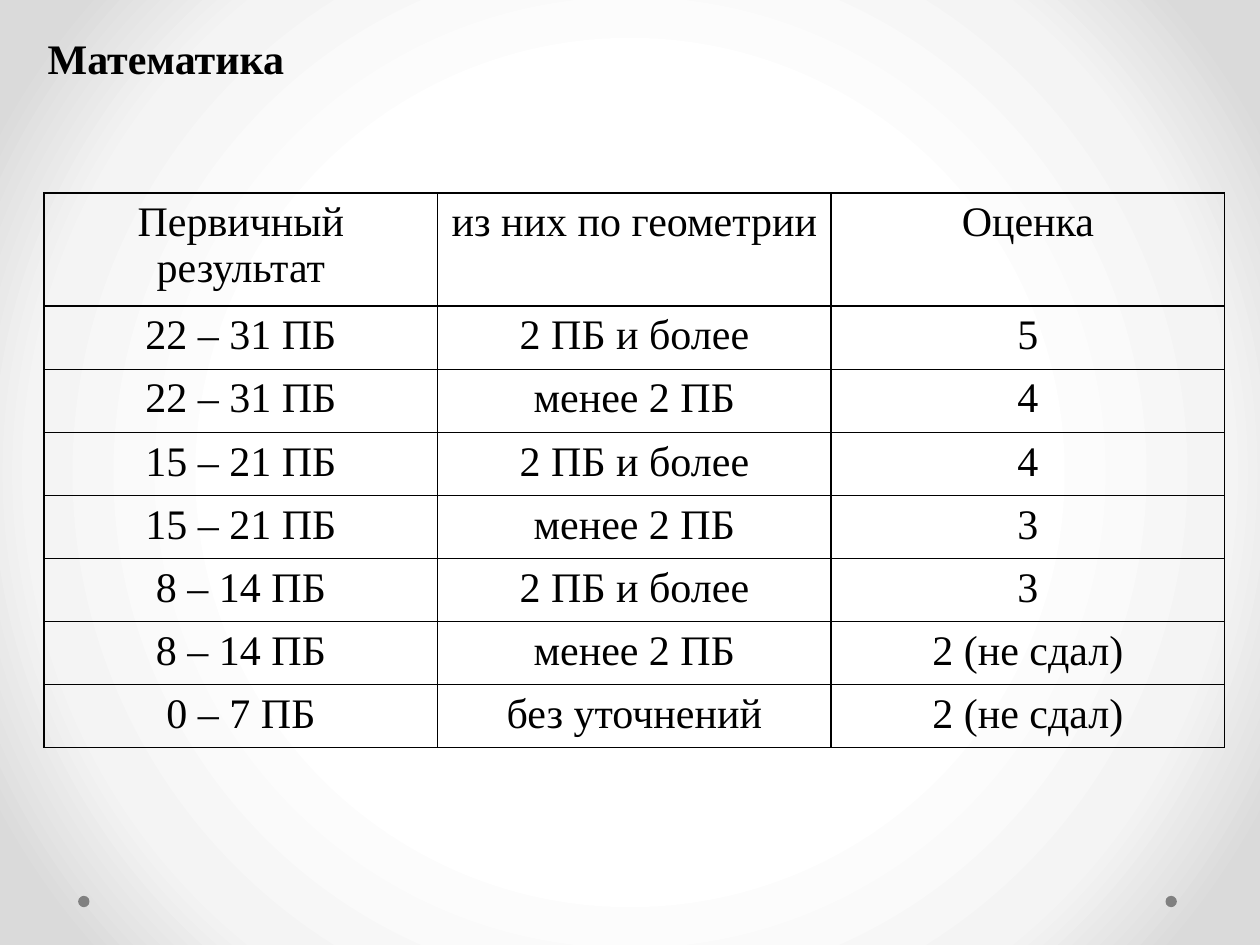
from lxml import etree
from pptx import Presentation
from pptx.dml.color import RGBColor
from pptx.enum.shapes import MSO_SHAPE
from pptx.enum.text import PP_ALIGN
from pptx.oxml import parse_xml
from pptx.oxml.ns import nsdecls, qn
from pptx.util import Inches, Pt

CENTER = PP_ALIGN.CENTER
OVAL = MSO_SHAPE.OVAL

WIDTH, HEIGHT = 10, 7.5
FONT = "Times New Roman"
BLACK, GRAY = "000000", "808080"
BACKDROP_STOPS = [(50, "FFFFFF"), (76, "F4F4F4"), (92, "DADADA")]

TABLE_LEFT, TABLE_TOP, TABLE_WIDTH = 0.35, 1.53, 9.37
HEADER_HEIGHT, ROW_HEIGHT = 0.9, 0.5
DOT_SIZE, DOT_TOP = 0.09, 7.11

GRADES = [
    ("Первичный результат", "из них по геометрии", "Оценка"),
    ("22 – 31 ПБ", "2 ПБ и более", "5"),
    ("22 – 31 ПБ", "менее 2 ПБ", "4"),
    ("15 – 21 ПБ", "2 ПБ и более", "4"),
    ("15 – 21 ПБ", "менее 2 ПБ", "3"),
    ("8 – 14 ПБ", "2 ПБ и более", "3"),
    ("8 – 14 ПБ", "менее 2 ПБ", "2 (не сдал)"),
    ("0 – 7 ПБ", "без уточнений", "2 (не сдал)"),
]


def color(hex_value):
    return RGBColor.from_string(hex_value)


def write(frame, text, bold=False, align=None):
    frame.text = text
    paragraph = frame.paragraphs[0]
    paragraph.alignment = align
    font = paragraph.runs[0].font
    font.name, font.size, font.bold = FONT, Pt(24), bold
    font.color.rgb = color(BLACK)


def paint_backdrop(slide, stops):
    """Fill the background with a circular gradient from the centre outwards."""
    slide.background.fill.gradient()
    gradient = slide.element.find(".//" + qn("a:gradFill"))
    for child in list(gradient):
        gradient.remove(child)
    stop_list = etree.SubElement(gradient, qn("a:gsLst"))
    for percent, hex_value in stops:
        stop = etree.SubElement(stop_list, qn("a:gs"), pos=str(percent * 1000))
        etree.SubElement(stop, qn("a:srgbClr"), val=hex_value)
    circle = etree.SubElement(gradient, qn("a:path"), path="circle")
    etree.SubElement(circle, qn("a:fillToRect"), dict.fromkeys("ltrb", "50000"))


def add_dot(slide, left):
    dot = slide.shapes.add_shape(
        OVAL, Inches(left), Inches(DOT_TOP), Inches(DOT_SIZE), Inches(DOT_SIZE))
    dot.shadow.inherit = False
    dot.fill.solid()
    dot.fill.fore_color.rgb = color(GRAY)
    dot.line.fill.background()


def add_title(slide, text):
    title = slide.shapes.add_textbox(
        Inches(0.28), Inches(0.21), Inches(9.21), Inches(0.5))
    title.text_frame.word_wrap = True
    write(title.text_frame, text, bold=True)


def outline(cell):
    properties = cell._tc.get_or_add_tcPr()
    for position, side in enumerate("LRTB"):
        properties.insert(position, parse_xml(
            f'<a:ln{side} {nsdecls("a")} w="12700"><a:solidFill>'
            f'<a:srgbClr val="{BLACK}"/></a:solidFill></a:ln{side}>'))


def add_grade_table(slide, rows):
    heights = [HEADER_HEIGHT] + [ROW_HEIGHT] * (len(rows) - 1)
    table = slide.shapes.add_table(
        len(rows), len(rows[0]), Inches(TABLE_LEFT), Inches(TABLE_TOP),
        Inches(TABLE_WIDTH), Inches(sum(heights))).table
    table.first_row = table.horz_banding = False
    for row, height, texts in zip(table.rows, heights, rows):
        row.height = Inches(height)
        for cell, text in zip(row.cells, texts):
            cell.fill.background()
            outline(cell)
            write(cell.text_frame, text, align=CENTER)


def main():
    deck = Presentation()
    deck.slide_width, deck.slide_height = Inches(WIDTH), Inches(HEIGHT)
    slide = deck.slides.add_slide(deck.slide_layouts[6])
    paint_backdrop(slide, BACKDROP_STOPS)
    for left in (9.25, 0.62):
        add_dot(slide, left)
    add_title(slide, "Математика")
    add_grade_table(slide, GRADES)
    deck.save("out.pptx")


if __name__ == "__main__":
    main()
